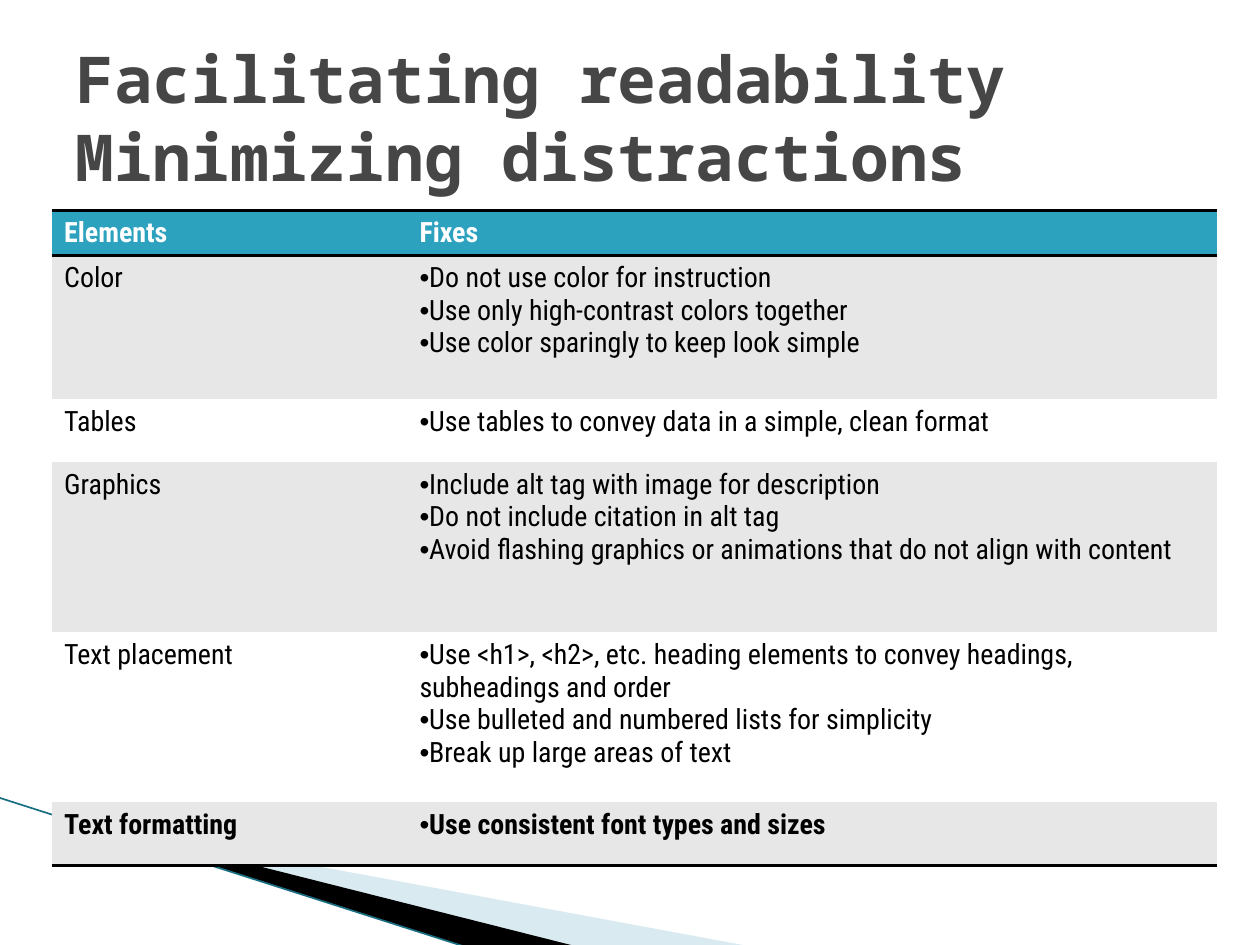
from lxml.etree import SubElement
from pptx import Presentation
from pptx.dml.color import RGBColor
from pptx.enum.shapes import MSO_CONNECTOR as Connector
from pptx.enum.text import MSO_ANCHOR as Anchor
from pptx.oxml import parse_xml
from pptx.oxml.ns import nsdecls, qn
from pptx.util import Inches, Pt


def color(value):
    return RGBColor.from_string(value)


def write(paragraph, text, font="Roboto Condensed", size=16, fill="000000",
          bold=False, bullet=False):
    paragraph.text = text
    if bullet:
        properties = paragraph._p.get_or_add_pPr()
        properties.set("marL", "0")
        properties.set("indent", "0")
        SubElement(properties, qn("a:buFont")).set("typeface", "Arial")
        SubElement(properties, qn("a:buChar")).set("char", "•")
    for run in paragraph.runs:
        run.font.name = font
        run.font.size = Pt(size)
        run.font.bold = bold
        run.font.color.rgb = color(fill)


prs = Presentation()
prs.slide_width, prs.slide_height = Inches(10), Inches(7.5)
slide = prs.slides.add_slide(prs.slide_layouts[6])

swooshes = [
    ("A0CBDC", 40, [(0.55, 6.51), (5.95, 7.51), (4.56, 7.51), (0.55, 6.5)]),
    ("000000", 100, [(0.53, 6.49), (4.57, 7.51), (3.72, 7.52), (0.54, 6.5)]),
]
for fill, opacity, corners in swooshes:
    points = [(Inches(x), Inches(y)) for x, y in corners]
    builder = slide.shapes.build_freeform(*points[0])
    builder.add_line_segments(points[1:])
    swoosh = builder.convert_to_shape()
    swoosh.shadow.inherit = False
    swoosh.line.fill.background()
    swoosh.fill.solid()
    swoosh.fill.fore_color.rgb = color(fill)
    if opacity < 100:
        tint = swoosh._element.spPr.find(qn("a:solidFill"))[0]
        SubElement(tint, qn("a:alpha")).set("val", str(opacity * 1000))

edge = slide.shapes.add_connector(
    Connector.STRAIGHT, Inches(-0.01), Inches(6.33), Inches(3.71), Inches(7.52))
edge.line.color.rgb = color("1A6E82")
edge.line.width = Pt(0.95)
SubElement(edge._element.spPr, qn("a:effectLst"))

guidelines = [
    ("Elements", ["Fixes"], 0.29),
    ("Color", ["Do not use color for instruction",
               "Use only high-contrast colors together",
               "Use color sparingly to keep look simple"], 1.14),
    ("Tables", ["Use tables to convey data in a simple, clean format"], 0.5),
    ("Graphics", ["Include alt tag with image for description",
                  "Do not include citation in alt tag",
                  "Avoid flashing graphics or animations that do not align with content"],
     1.35),
    ("Text placement", ["Use <h1>, <h2>, etc. heading elements to convey headings, "
                        "subheadings and order",
                        "Use bulleted and numbered lists for simplicity",
                        "Break up large areas of text"], 1.35),
    ("Text formatting", ["Use consistent font types and sizes"], 0.5),
]
last = len(guidelines) - 1
table = slide.shapes.add_table(
    len(guidelines), 2, Inches(0.41), Inches(1.67), Inches(9.25), Inches(5.13)).table
table._tbl.tblPr.find(qn("a:tableStyleId")).text = "{2D5ABB26-0587-4C30-8999-92F81FD0307C}"
table.columns[0].width, table.columns[1].width = Inches(2.82), Inches(6.43)

for row, (element, fixes, height) in enumerate(guidelines):
    table.rows[row].height = Inches(height)
    header = row == 0
    band = "2DA2BF" if header else "E7E7E7" if row % 2 else "FFFFFF"
    borders = ["lnB", "lnT"] if header else ["lnB"] if row == last else []
    for column, lines in enumerate([[element], fixes]):
        cell = table.cell(row, column)
        cell.fill.solid()
        cell.fill.fore_color.rgb = color(band)
        for side in borders:
            cell._tc.get_or_add_tcPr().insert(0, parse_xml(
                f'<a:{side} {nsdecls("a")} w="{Pt(2)}"><a:solidFill>'
                f'<a:srgbClr val="000000"/></a:solidFill></a:{side}>'))
        for index, line in enumerate(lines):
            frame = cell.text_frame
            paragraph = frame.add_paragraph() if index else frame.paragraphs[0]
            write(paragraph, line, fill="FFFFFF" if header else "000000",
                  bold=row in (0, last), bullet=column == 1 and not header)

title = slide.shapes.add_textbox(
    Inches(0.5), Inches(0.3), Inches(9), Inches(1.25)).text_frame
title.word_wrap = True
title.vertical_anchor = Anchor.MIDDLE
write(title.paragraphs[0], "Facilitating readability\vMinimizing distractions",
      font="Noto Sans Mono", size=36.9, fill="464646", bold=True)

prs.save("out.pptx")
